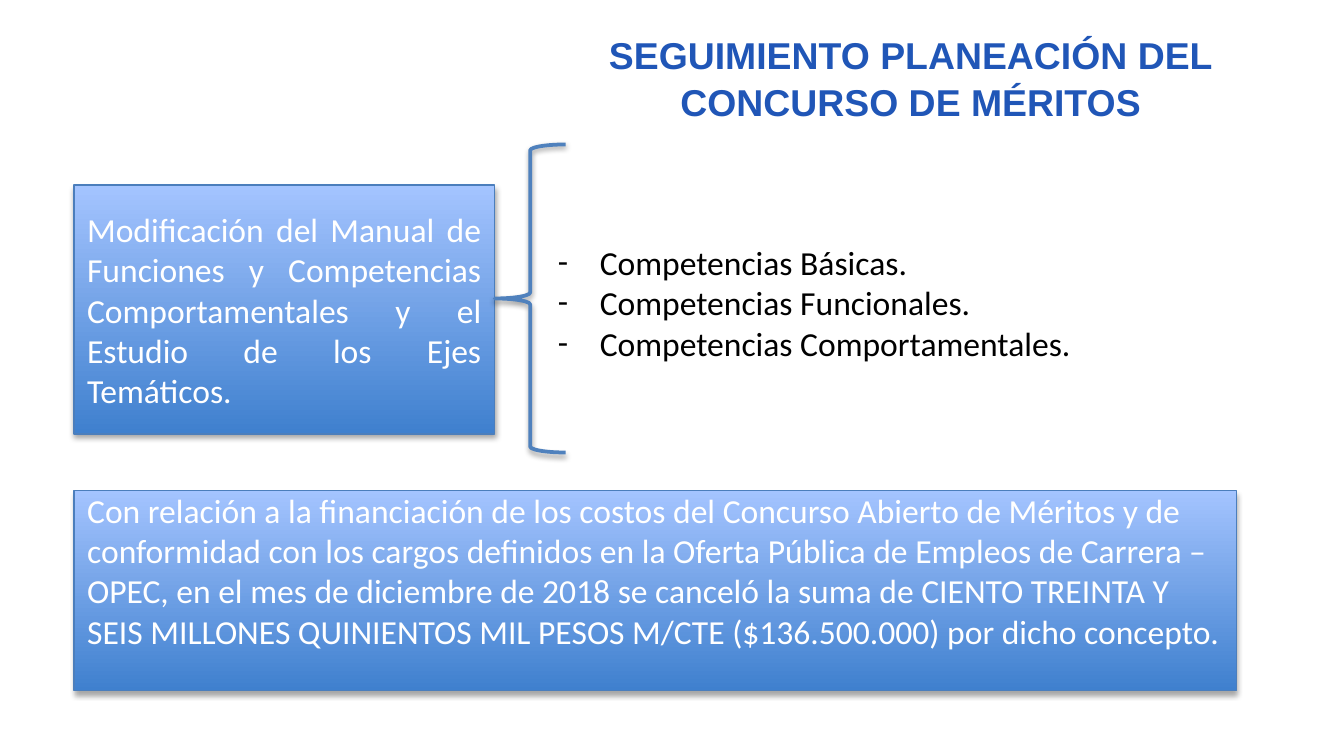
"""Builds the slide on planning the merit-based competition."""
import pptx
import pptx.dml.color
import pptx.enum.shapes
import pptx.enum.text
import pptx.oxml
import pptx.oxml.ns
import pptx.util

Pt = pptx.util.Pt
RGBColor = pptx.dml.color.RGBColor
SHAPE = pptx.enum.shapes.MSO_SHAPE
ALIGN = pptx.enum.text.PP_ALIGN
ANCHOR = pptx.enum.text.MSO_ANCHOR
AUTO = pptx.enum.text.MSO_AUTO_SIZE
qn = pptx.oxml.ns.qn
NS = pptx.oxml.ns.nsdecls("a")

TITLE_BLUE = RGBColor(0x20, 0x56, 0xB7)
DARK_BLUE = RGBColor(0x3F, 0x80, 0xCE)
LIGHT_BLUE = RGBColor(0xA4, 0xC4, 0xFF)
BORDER = RGBColor(0x4B, 0x7E, 0xBC)
BRACE_BLUE = RGBColor(0x4F, 0x81, 0xBD)
WHITE = RGBColor(0xFF, 0xFF, 0xFF)
BLACK = RGBColor(0, 0, 0)

TITLE = "SEGUIMIENTO PLANEACIÓN DEL CONCURSO DE MÉRITOS"
SKILLS = [
    "Competencias Básicas.",
    "Competencias Funcionales.",
    "Competencias Comportamentales.",
]
PANELS = [
    {
        "text": "Modificación del Manual de Funciones y Competencias "
                "Comportamentales y el Estudio de los Ejes Temáticos.",
        "box": (39.6, 99.2, 225.4, 133.4),
        "align": ALIGN.JUSTIFY,
        "bottom": 3.6,
    },
    {
        "text": "Con relación a la financiación de los costos del Concurso Abierto "
                "de Méritos y de conformidad con los cargos definidos en la Oferta "
                "Pública de Empleos de Carrera – OPEC, en el mes de diciembre de "
                "2018 se canceló la suma de CIENTO TREINTA Y SEIS MILLONES "
                "QUINIENTOS MIL PESOS M/CTE ($136.500.000) por dicho concepto.",
        "box": (39.6, 262.8, 622.8, 107.2),
        "align": ALIGN.LEFT,
        "bottom": 25.2,
    },
]
TITLE_BOX = (265, 17.3, 445.7, 47.5)
BRACE_BOX = (265, 77.4, 38, 165)
SKILLS_BOX = (291.6, 126, 356.4, 94.3)

TITLE_FONT = {"name": "Arial", "size": Pt(20), "bold": True}
BODY_FONT = {"name": "Calibri", "size": Pt(18), "bold": False}


def place(sp, box):
    for name, value in zip(("left", "top", "width", "height"), box):
        setattr(sp, name, Pt(value))


def write(p, text, font, color):
    r = p.add_run()
    r.text = text
    for name, value in font.items():
        setattr(r.font, name, value)
    r.font.color.rgb = color


def set_frame(tf, anchor):
    values = {"word_wrap": True, "auto_size": AUTO.NONE, "vertical_anchor": anchor}
    for name, value in values.items():
        setattr(tf, name, value)


def outline(sp, color, width):
    sp.line.color.rgb = color
    sp.line.width = Pt(width)


def add_shadow(sp, distance, opacity):
    sp.shadow.inherit = False
    effects = sp._element.spPr.find(qn("a:effectLst"))
    effects.append(pptx.oxml.parse_xml(
        f'<a:outerShdw {NS} blurRad="{Pt(3.1)}" dist="{Pt(distance)}" dir="5400000" '
        f'rotWithShape="0"><a:srgbClr val="000000"><a:alpha val="{opacity * 1000}"/>'
        f'</a:srgbClr></a:outerShdw>'))


def add_panel(s, panel):
    sp = s.shapes.add_shape(SHAPE.RECTANGLE, *map(Pt, panel["box"]))
    sp.fill.gradient()
    sp.fill.gradient_angle = 90
    for stop, color in zip(sp.fill.gradient_stops, (DARK_BLUE, LIGHT_BLUE)):
        stop.color.rgb = color
    outline(sp, BORDER, 0.75)
    add_shadow(sp, 1.8, 35)
    tf = sp.text_frame
    set_frame(tf, ANCHOR.MIDDLE)
    tf.margin_bottom = Pt(panel["bottom"])
    p = tf.paragraphs[0]
    p.alignment = panel["align"]
    write(p, panel["text"], BODY_FONT, WHITE)


def add_title(s):
    sp = s.shapes.title
    place(sp, TITLE_BOX)
    set_frame(sp.text_frame, ANCHOR.MIDDLE)
    p = sp.text_frame.paragraphs[0]
    p.alignment = ALIGN.CENTER
    p.line_spacing = 1.05
    write(p, TITLE, TITLE_FONT, TITLE_BLUE)


def add_brace(s):
    sp = s.shapes.add_shape(SHAPE.LEFT_BRACE, *map(Pt, BRACE_BOX))
    sp.fill.background()
    outline(sp, BRACE_BLUE, 2)
    add_shadow(sp, 1.6, 38)


def add_skills(s):
    sp = s.placeholders[1]
    place(sp, SKILLS_BOX)
    tf = sp.text_frame
    set_frame(tf, ANCHOR.TOP)
    for i, skill in enumerate(SKILLS):
        p = tf.add_paragraph() if i else tf.paragraphs[0]
        p.space_before = Pt(0)
        pPr = p._p.get_or_add_pPr()
        pPr.set("marL", str(Pt(22.5)))
        pPr.set("indent", str(-Pt(22.5)))
        for xml in (f'<a:buFont {NS} typeface="Calibri"/>', f'<a:buChar {NS} char="-"/>'):
            pPr.append(pptx.oxml.parse_xml(xml))
        write(p, skill, BODY_FONT, BLACK)


def main():
    prs = pptx.Presentation()
    prs.slide_width, prs.slide_height = Pt(720), Pt(405)
    s = prs.slides.add_slide(prs.slide_layouts[1])
    add_title(s)
    add_skills(s)
    for panel in PANELS:
        add_panel(s, panel)
    add_brace(s)
    prs.save("out.pptx")


if __name__ == "__main__":
    main()
